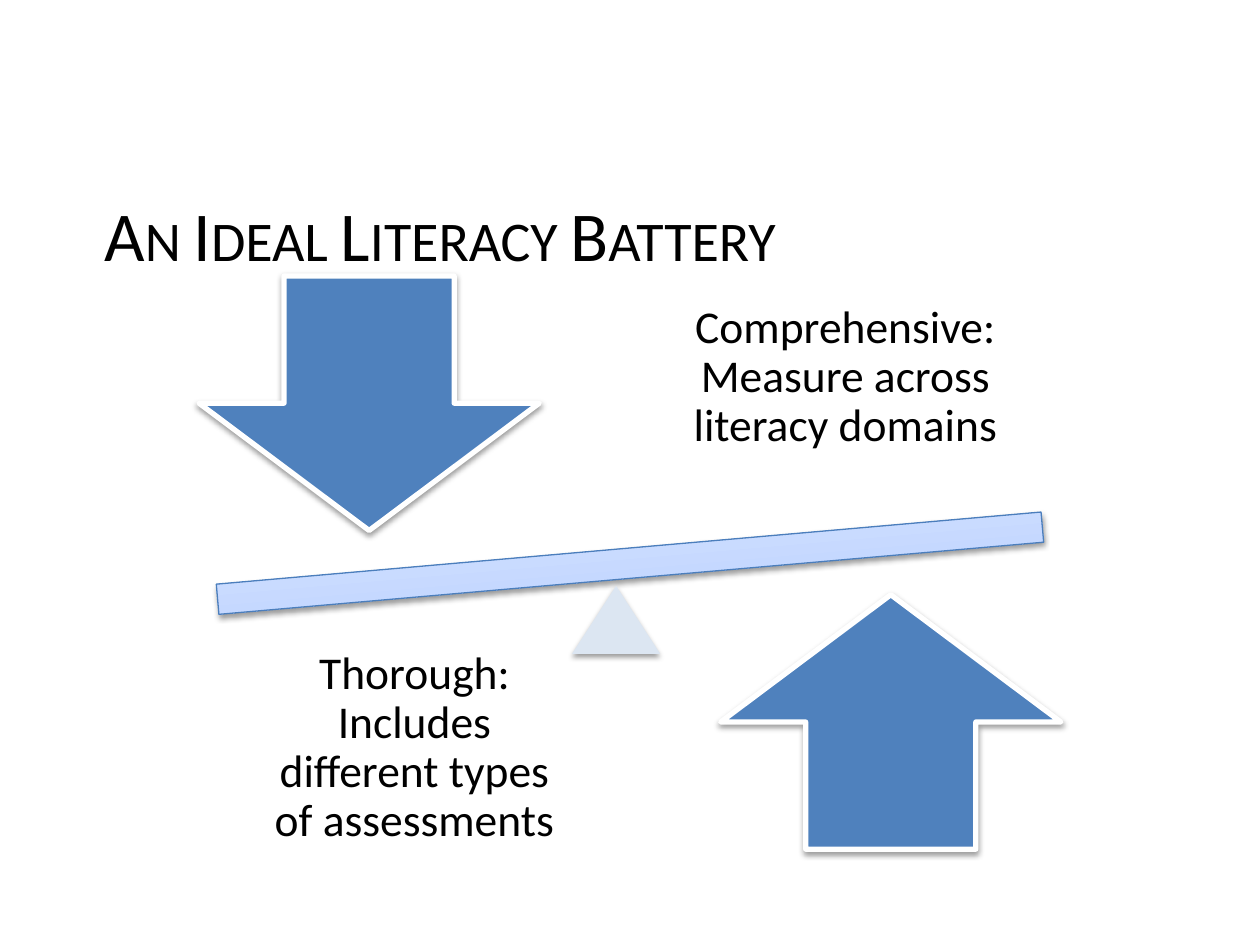
from copy import deepcopy
from lxml.etree import SubElement
from pptx import Presentation
from pptx.dml.color import RGBColor
from pptx.enum.shapes import MSO_SHAPE as KIND
from pptx.enum.text import MSO_ANCHOR, PP_ALIGN
from pptx.oxml.ns import qn
from pptx.util import Inches, Pt

WIDE, HIGH = 10, 7.5
BLUE, WHITE, BLACK = "4F81BD", "FFFFFF", "000000"
TITLE = ("An Ideal Literacy Battery", (0.73, 1.33, 8.6, 1.05))
BEAM = (0.53, 3.96, 8.94, 1.02)
RAMP = [(0, "A4C4FF"), (0.35, "BFD4FF"), (1, "E6EEFF")]
PIVOT = (4.54, 4.65, 0.7, 0.54)
ARROW, LABEL = (2.7, 2.02), (2.88, 2.12)
SIDES = [
    (KIND.DOWN_ARROW, (1.58, 2.19),
     "Comprehensive: Measure across literacy domains", (5.27, 1.94)),
    (KIND.UP_ARROW, (5.72, 4.72),
     "Thorough: Includes different types of assessments", (1.85, 4.88)),
]
HEAD = {"size": Pt(40), "name": "Calibri"}
BODY = {"size": Pt(26), "name": "Calibri"}
LEFT = {"alignment": PP_ALIGN.LEFT}
MID = {"alignment": PP_ALIGN.CENTER, "line_spacing": 0.9}
SIDE_NAMES = ("left", "top", "right", "bottom")
PAD = {f"margin_{side}": Inches(0.2) for side in SIDE_NAMES}


def color(code):
    return RGBColor.from_string(code)


def apply(target, values):
    for key, value in values.items():
        setattr(target, key, value)


def shade(shape):
    shape.shadow.inherit = False
    effects = shape._element.spPr.find(qn("a:effectLst"))
    outer = SubElement(effects, qn("a:outerShdw"), blurRad="40000",
                       dist="20000", dir="5400000", rotWithShape="0")
    tint = SubElement(outer, qn("a:srgbClr"), val=BLACK)
    SubElement(tint, qn("a:alpha"), val="38000")


def draw(slide, kind, box, fill=None, line=None, width=0):
    shape = slide.shapes.add_shape(kind, *map(Inches, box))
    if fill:
        shape.fill.solid()
        shape.fill.fore_color.rgb = color(fill)
    if line:
        shape.line.color.rgb = color(line)
        shape.line.width = Pt(width)
    else:
        shape.line.fill.background()
    shade(shape)
    return shape


def blend(shape, ramp):
    shape.fill.gradient()
    shape.fill.gradient_angle = 90
    stops = shape._element.spPr.find(qn("a:gradFill")).find(qn("a:gsLst"))
    stops.append(deepcopy(stops[-1]))
    for stop, (place, code) in zip(shape.fill.gradient_stops, ramp):
        stop.position = place
        stop.color.rgb = color(code)


def write(slide, text, box, font, para, pad):
    frame = slide.shapes.add_textbox(*map(Inches, box)).text_frame
    apply(frame, {"word_wrap": True,
                  "vertical_anchor": MSO_ANCHOR.MIDDLE, **pad})
    line = frame.paragraphs[0]
    apply(line, para)
    run = line.add_run()
    run.text = text
    apply(run.font, font)
    run.font.color.rgb = color(BLACK)
    return run


def main():
    deck = Presentation()
    apply(deck, {"slide_width": Inches(WIDE), "slide_height": Inches(HIGH)})
    slide = deck.slides.add_slide(deck.slide_layouts[6])
    title = write(slide, *TITLE, HEAD, LEFT, {})
    title.font._element.set("cap", "small")
    beam = draw(slide, KIND.MATH_MINUS, BEAM, line="4B7EBC", width=0.75)
    beam.rotation = 355
    blend(beam, RAMP)
    for kind, spot, text, place in SIDES:
        draw(slide, kind, spot + ARROW, BLUE, WHITE, 3)
        write(slide, text, place + LABEL, BODY, MID, PAD)
    draw(slide, KIND.ISOSCELES_TRIANGLE, PIVOT, "DCE6F2")
    deck.save("out.pptx")


if __name__ == "__main__":
    main()
